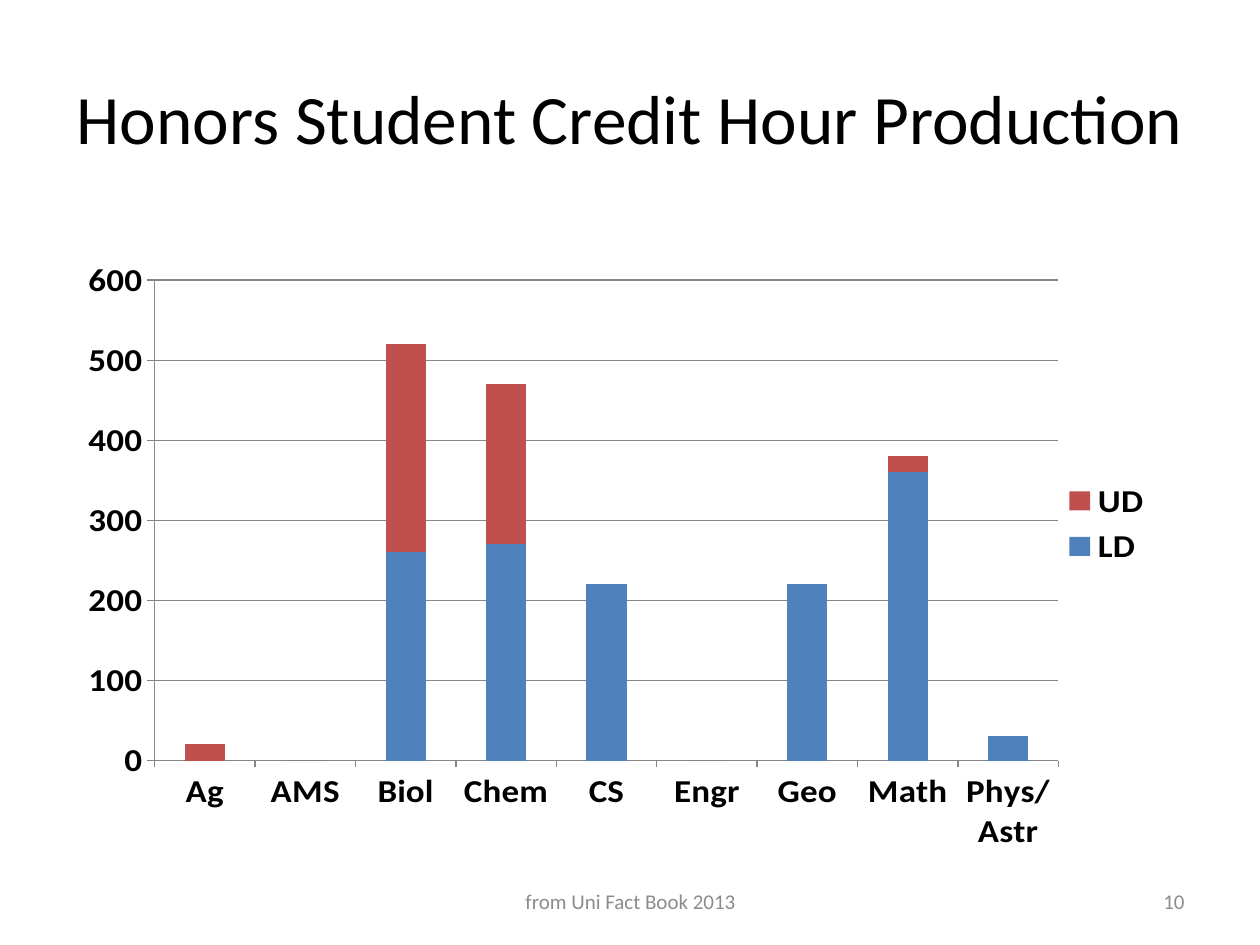
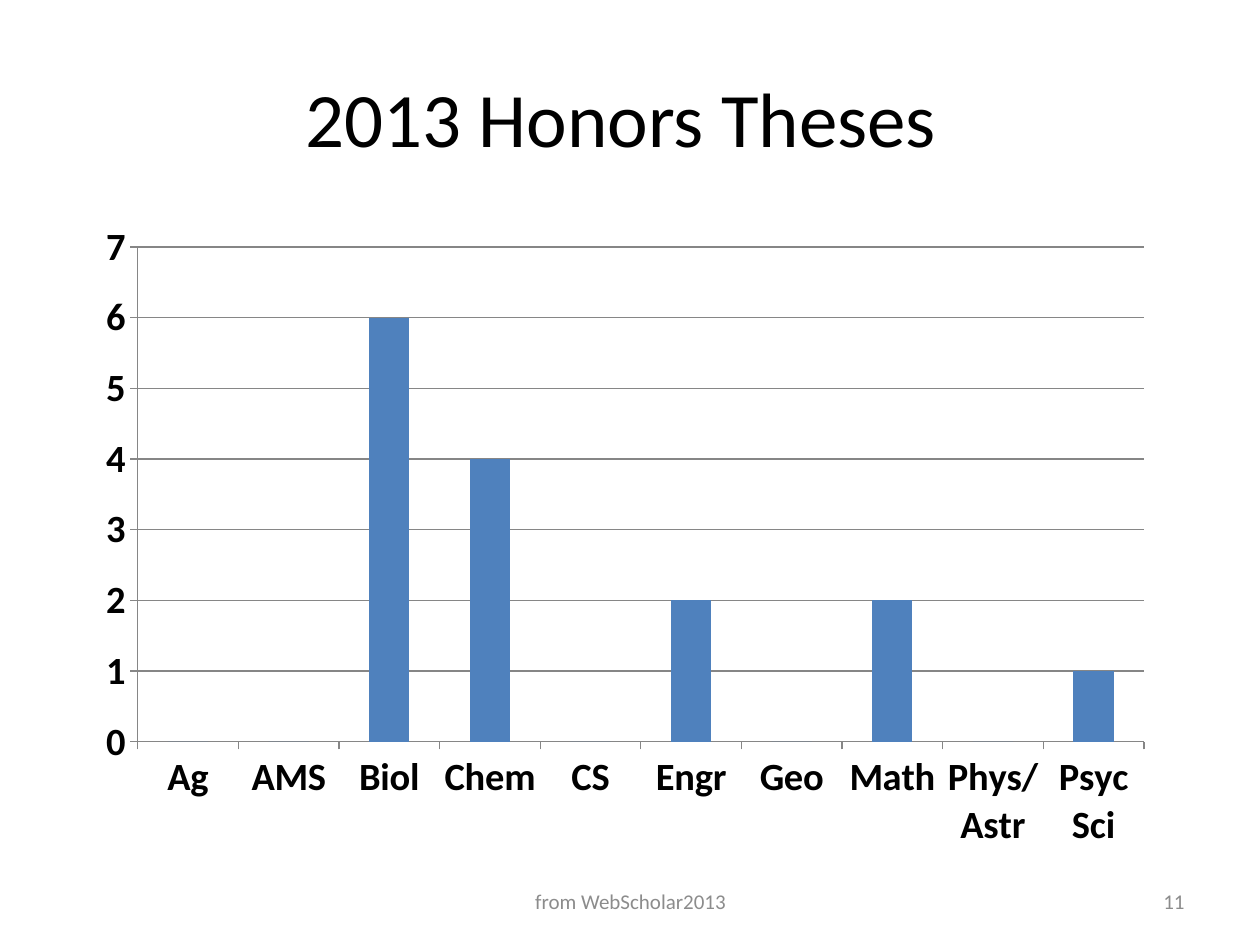
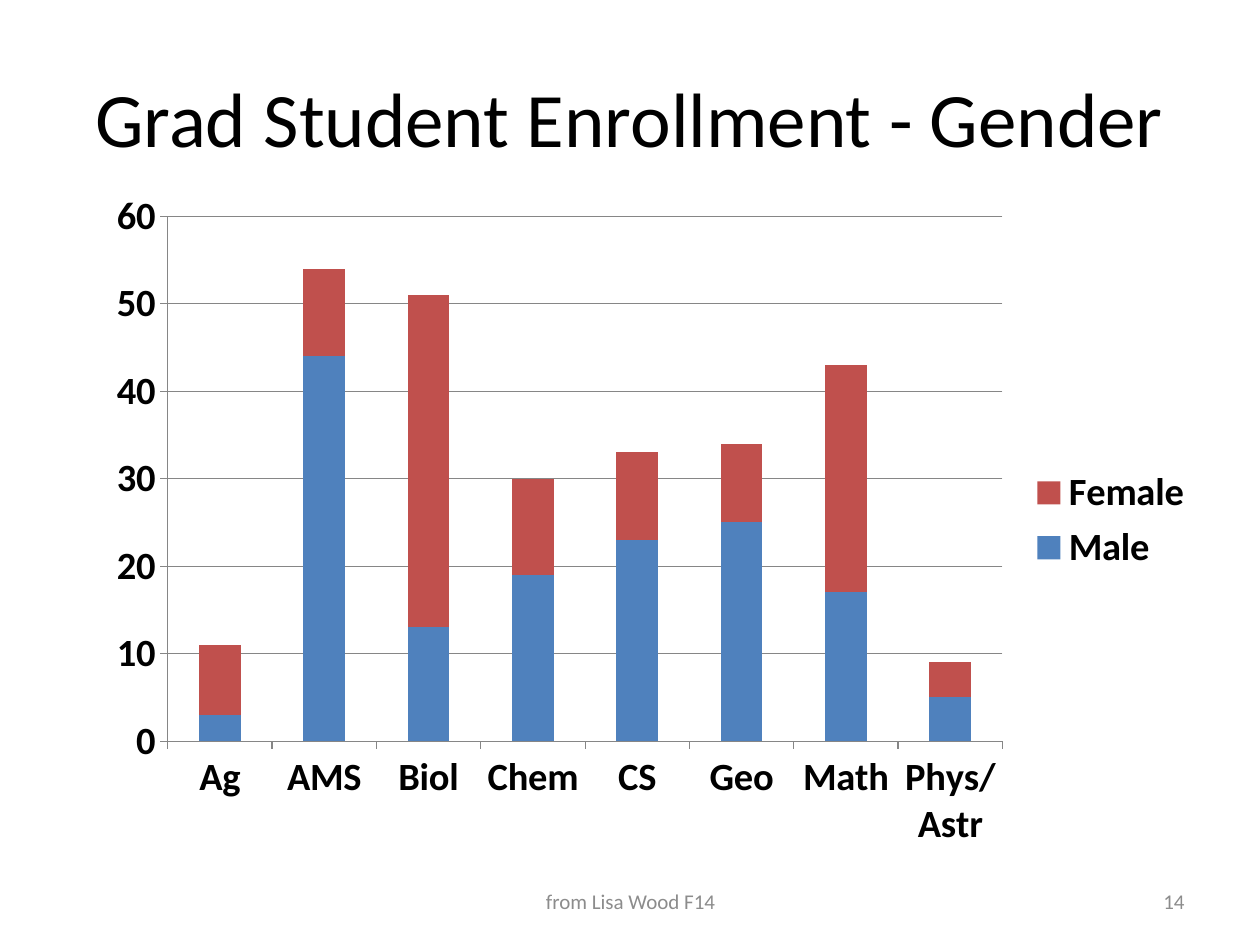
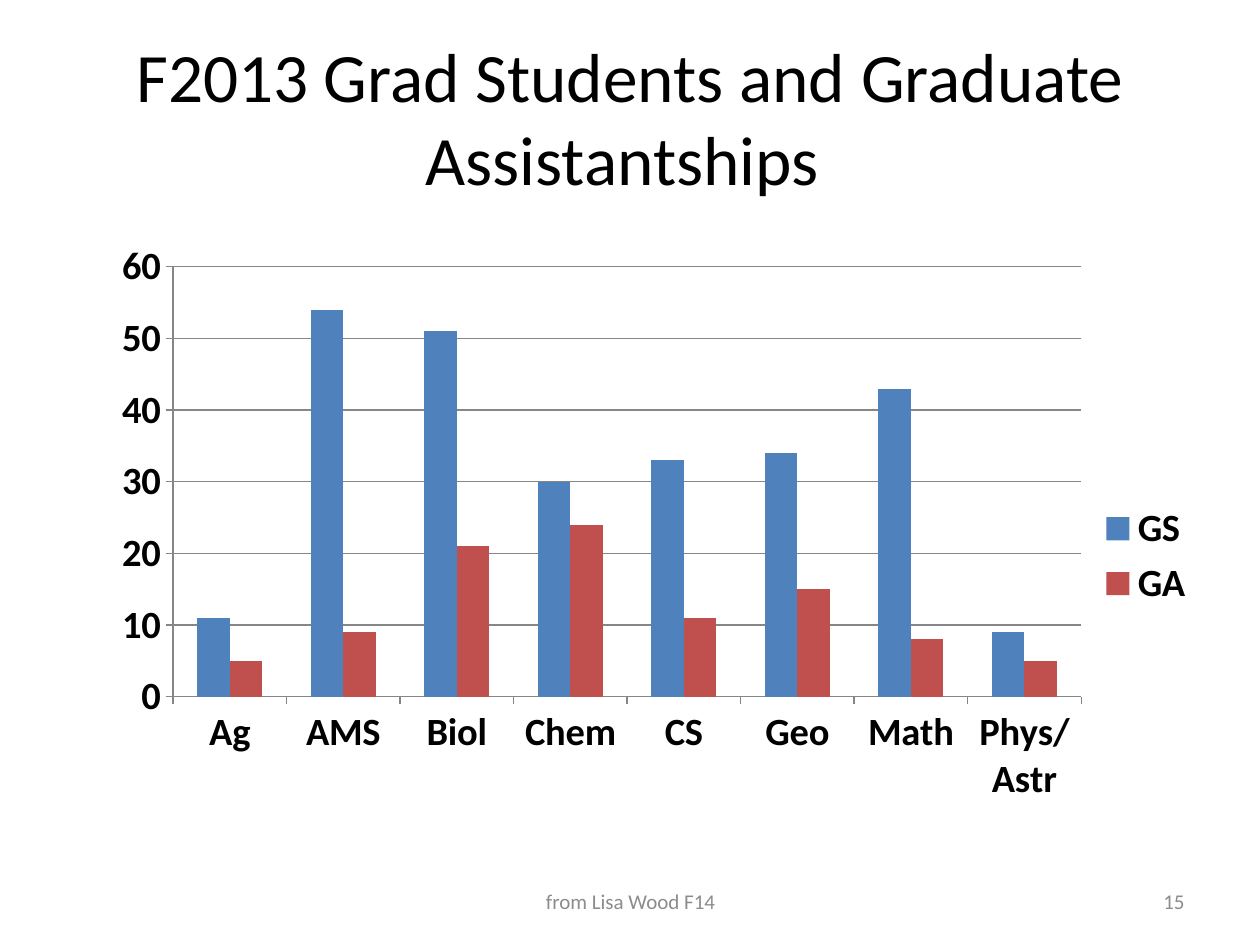
import pptx
import pptx.util
import pptx.chart.data
import pptx.oxml
from pptx.dml.color import RGBColor
from pptx.enum.chart import XL_CHART_TYPE, XL_LEGEND_POSITION, XL_TICK_MARK
from pptx.enum.text import MSO_ANCHOR, PP_ALIGN
from pptx.util import Inches

BLACK = RGBColor(0x00, 0x00, 0x00)
GRAY = RGBColor(0x8C, 0x8C, 0x8C)
GRID = RGBColor(0x86, 0x86, 0x86)
BLUE = RGBColor(0x4F, 0x81, 0xBD)
RED = RGBColor(0xC0, 0x50, 0x4D)
FONT = "Calibri"
STACKED = XL_CHART_TYPE.COLUMN_STACKED
CLUSTERED = XL_CHART_TYPE.COLUMN_CLUSTERED
DEPTS = ["Ag", "AMS", "Biol", "Chem", "CS", "Engr", "Geo", "Math", "Phys/Astr"]
GRAD_DEPTS = [d for d in DEPTS if d != "Engr"]
LAYOUT = (
    '<c:layout xmlns:c="http://schemas.openxmlformats.org/drawingml/2006/chart">'
    '<c:manualLayout><c:layoutTarget val="inner"/>'
    '<c:xMode val="edge"/><c:yMode val="edge"/>'
    '<c:x val="%s"/><c:y val="%s"/><c:w val="%s"/><c:h val="%s"/>'
    "</c:manualLayout></c:layout>"
)

SLIDES = [
    dict(title="Honors Student Credit Hour Production", title_size=39.6,
         source="from Uni Fact Book 2013", number=10,
         kind=STACKED, box=(0.67, 2, 8.58, 4.75), size=20, depts=DEPTS,
         plot=(0.065, 0.052, 0.836, 0.884),
         series={"LD": [0, 0, 260, 270, 220, 0, 220, 360, 30],
                 "UD": [20, 0, 260, 200, 0, None, 0, 20, 0]}),
    dict(title="2013 Honors Theses ", title_size=44,
         source="from WebScholar2013", number=11,
         kind=STACKED, box=(0.67, 1.67, 8.58, 5.17), size=22,
         depts=DEPTS + ["Psyc Sci"], plot=None,
         series={"Series 1": [0, 0, 6, 4, 0, 2, 0, 2, 0, 1]}),
    dict(title="Grad Student Enrollment - Gender", title_size=44,
         source="from Lisa Wood F14", number=14,
         kind=STACKED, box=(0.75, 1.42, 8.83, 5.42), size=22, depts=GRAD_DEPTS,
         plot=None,
         series={"Male ": [3, 44, 13, 19, 23, 25, 17, 5],
                 "Female": [8, 10, 38, 11, 10, 9, 26, 4]}),
    dict(title="F2013 Grad Students and Graduate Assistantships ", title_size=39.6,
         source="from Lisa Wood F14", number=15,
         kind=CLUSTERED, box=(0.42, 1.75, 9.17, 5.33), size=22, depts=GRAD_DEPTS,
         plot=(0.104, 0.069, 0.786, 0.64),
         series={"GS": [11, 54, 51, 30, 33, 34, 43, 9],
                 "GA": [5, 9, 21, 24, 11, 15, 8, 5]}),
]


def add_text(s, text, box, size, color, align):
    tf = s.shapes.add_textbox(*[Inches(v) for v in box]).text_frame
    tf.word_wrap = True
    tf.vertical_anchor = MSO_ANCHOR.MIDDLE
    tf.text = text
    p = tf.paragraphs[0]
    p.alignment = align
    set_font(p.runs[0].font, size, color)


def set_font(font, size, color=BLACK, bold=False):
    font.name = FONT
    font.size = pptx.util.Pt(size)
    font.bold = bold
    font.color.rgb = color


prs = pptx.Presentation()
prs.slide_width = Inches(10)
prs.slide_height = Inches(7.5)

for d in SLIDES:
    s = prs.slides.add_slide(prs.slide_layouts[6])
    add_text(s, d["title"], (0.5, 0.3, 9, 1.25), d["title_size"], BLACK, PP_ALIGN.CENTER)

    data = pptx.chart.data.CategoryChartData()
    data.categories = d["depts"]
    for name, values in d["series"].items():
        data.add_series(name, values)
    box = [Inches(v) for v in d["box"]]
    chart = s.shapes.add_chart(d["kind"], *box, data).chart
    chart.has_title = False
    set_font(chart.font, 10)

    plot = chart.plots[0]
    plot.gap_width = 150
    plot.vary_by_categories = False
    for series, color in zip(plot.series, (BLUE, RED)):
        series.format.fill.solid()
        series.format.fill.fore_color.rgb = color

    for axis in (chart.category_axis, chart.value_axis):
        axis.major_tick_mark = XL_TICK_MARK.OUTSIDE
        axis.minor_tick_mark = XL_TICK_MARK.NONE
        axis.format.line.color.rgb = GRID
        set_font(axis.tick_labels.font, d["size"], bold=True)
    chart.value_axis.has_major_gridlines = True
    chart.value_axis.major_gridlines.format.line.color.rgb = GRID

    chart.has_legend = len(d["series"]) > 1
    if chart.has_legend:
        chart.legend.position = XL_LEGEND_POSITION.RIGHT
        chart.legend.include_in_layout = False
        set_font(chart.legend.font, d["size"], bold=True)

    if d["plot"]:
        area = chart.element.xpath("c:chart/c:plotArea")[0]
        for old in area.xpath("c:layout"):
            area.remove(old)
        area.insert(0, pptx.oxml.parse_xml(LAYOUT % d["plot"]))

    add_text(s, d["source"], (3.42, 6.95, 3.17, 0.4), 12, GRAY, PP_ALIGN.CENTER)
    add_text(s, str(d["number"]), (7.17, 6.95, 2.33, 0.4), 12, GRAY, PP_ALIGN.RIGHT)

prs.save("out.pptx")
